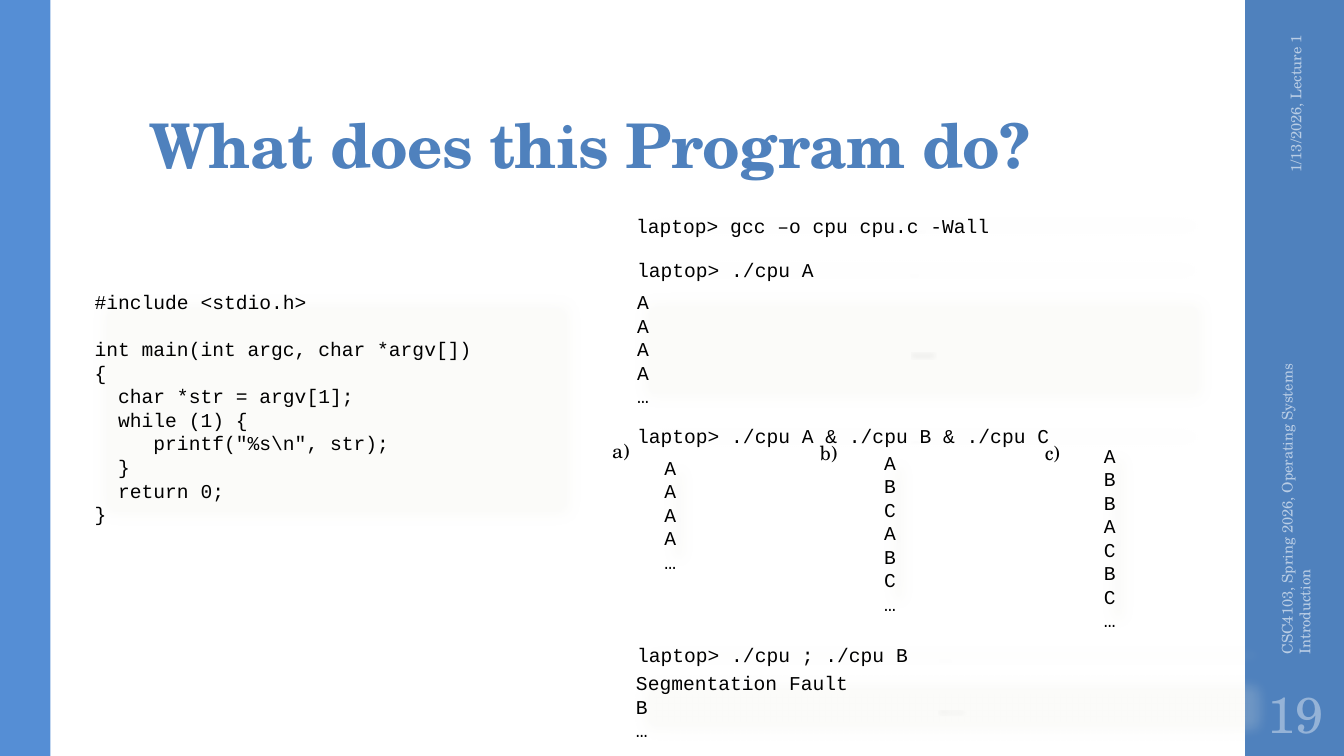
from lxml import etree
from pptx import Presentation
from pptx import util as u
from pptx.dml.color import RGBColor
from pptx.enum import shapes, text
from pptx.oxml.ns import qn

BLUE = RGBColor(0x4F, 0x81, 0xBD)
LIGHT_BLUE = RGBColor(0x55, 0x8E, 0xD5)
FOOTER_BLUE = RGBColor(0xB9, 0xCD, 0xE5)
NUMBER_BLUE = RGBColor(0x95, 0xB3, 0xD7)
CREAM = RGBColor(0xEE, 0xEC, 0xE1)
BLACK = RGBColor(0, 0, 0)
SERIF = "TeX Gyre Schola"
MONO = "Courier New"
PX = u.Inches(1) // 100

PROGRAM = r"""#include <stdio.h>

int main(int argc, char *argv[])
{
  char *str = argv[1];
  while (1) {
     printf("%s\n", str);
  }
  return 0;
}"""


class LectureSlide:
    """Lecture style and the slide that is being filled."""

    def __init__(self, deck):
        self.slide = deck.slides.add_slide(deck.slide_layouts[5])

    def box(self, left, top, width, height):
        return [n * PX for n in (left, top, width, height)]

    def fill_text(self, frame, words, font, size, color, align=text.PP_ALIGN.LEFT):
        frame.word_wrap = True
        frame.text = words
        for line in frame.paragraphs:
            line.alignment = align
            line.font.name = font
            line.font.size = u.Pt(size)
            line.font.color.rgb = color

    def title(self, words, *place):
        heading = self.slide.shapes.title
        heading.left, heading.top, heading.width, heading.height = self.box(*place)
        frame = heading.text_frame
        self.fill_text(frame, words, SERIF, 44, BLUE)
        frame.auto_size = text.MSO_AUTO_SIZE.NONE
        frame.vertical_anchor = text.MSO_ANCHOR.BOTTOM
        frame.margin_top = 3 * PX
        line = frame.paragraphs[0]
        line.line_spacing = 0.9
        line.font.bold = True
        line.runs[0]._r.get_or_add_rPr().set("spc", "-50")

    def band(self, color, *place):
        panel = self.slide.shapes.add_shape(shapes.MSO_SHAPE.RECTANGLE, *self.box(*place))
        panel.shadow.inherit = False
        panel.fill.solid()
        panel.fill.fore_color.rgb = color
        panel.line.fill.background()
        return panel

    def code(self, words, *place, shadow=True):
        panel = self.band(CREAM, *place)
        props = panel._element.spPr
        tint = props.find(qn("a:solidFill"))[0]
        etree.SubElement(tint, qn("a:alpha"), val="20000")
        effects = props.find(qn("a:effectLst"))
        if shadow:
            cast = etree.SubElement(effects, qn("a:outerShdw"), blurRad="50800", dist="50800",
                                    dir="5400000", sx="4000", sy="4000", algn="ctr", rotWithShape="0")
            shade = etree.SubElement(cast, qn("a:srgbClr"), val="000000")
            etree.SubElement(shade, qn("a:alpha"), val="43000")
        etree.SubElement(effects, qn("a:softEdge"), rad="127000")
        frame = panel.text_frame
        self.fill_text(frame, words, MONO, 14, BLACK)
        frame.vertical_anchor = text.MSO_ANCHOR.TOP
        frame.auto_size = text.MSO_AUTO_SIZE.SHAPE_TO_FIT_TEXT

    def label(self, words, *place, size=14, color=BLACK, align=text.PP_ALIGN.CENTER,
              anchor=text.MSO_ANCHOR.TOP, margin=10, turn=0):
        note = self.slide.shapes.add_textbox(*self.box(*place))
        note.rotation = turn
        frame = note.text_frame
        self.fill_text(frame, words, SERIF, size, color, align)
        frame.vertical_anchor = anchor
        frame.margin_left = frame.margin_right = margin * PX

    def footer(self, words, *place, align=text.PP_ALIGN.LEFT):
        self.label(words, *place, size=10.5, color=FOOTER_BLUE, align=align,
                   anchor=text.MSO_ANCHOR.MIDDLE, turn=270)


def main():
    deck = Presentation()
    deck.slide_width, deck.slide_height = u.Inches(13.33), u.Inches(7.5)
    page = LectureSlide(deck)
    page.band(BLUE, 1235, 0, 98, 750)
    page.band(LIGHT_BLUE, 0, 0, 50, 750)
    page.title("What does this Program do?", 138, 32, 1060, 153)

    page.code(PROGRAM, 84, 283, 500, 246, shadow=False)
    page.code("laptop> gcc –o cpu cpu.c -Wall", 621, 207, 588, 34)
    page.code("laptop> ./cpu A", 622, 251, 586, 34)
    page.code("A\nA\nA\nA\v…", 622, 283, 587, 128)
    page.code("laptop> ./cpu A & ./cpu B & ./cpu C", 622, 416, 587, 34)

    answers = (
        ("a) ", 581, 431, "A\nA\nA\nA\v…", 649, 447, 128),
        ("b) ", 787, 433, "A\nB\nC\nA\vB\nC\n…", 867, 442, 175),
        ("c) ", 1009, 433, "A\nB\nB\nA\nC\vB\nC\n…", 1085, 435, 199),
    )
    for letter, left, top, output, output_left, output_top, height in answers:
        page.code(output, output_left, output_top, 48, height)
        page.label(letter, left, top, 75, 34)

    page.code("laptop> ./cpu ; ./cpu B", 622, 633, 646, 34)
    page.code("Segmentation Fault\nB\n…", 621, 661, 646, 81)

    page.footer("1/13/2026, Lecture 1", 1181, 109, 208, 40, align=text.PP_ALIGN.RIGHT)
    page.footer("CSC4103, Spring 2026, Operating Systems Introduction", 1089, 443, 392, 40)
    page.label("19", 1235, 675, 100, 65, size=36, color=NUMBER_BLUE,
               anchor=text.MSO_ANCHOR.MIDDLE, margin=5)
    deck.save("out.pptx")


if __name__ == "__main__":
    main()
